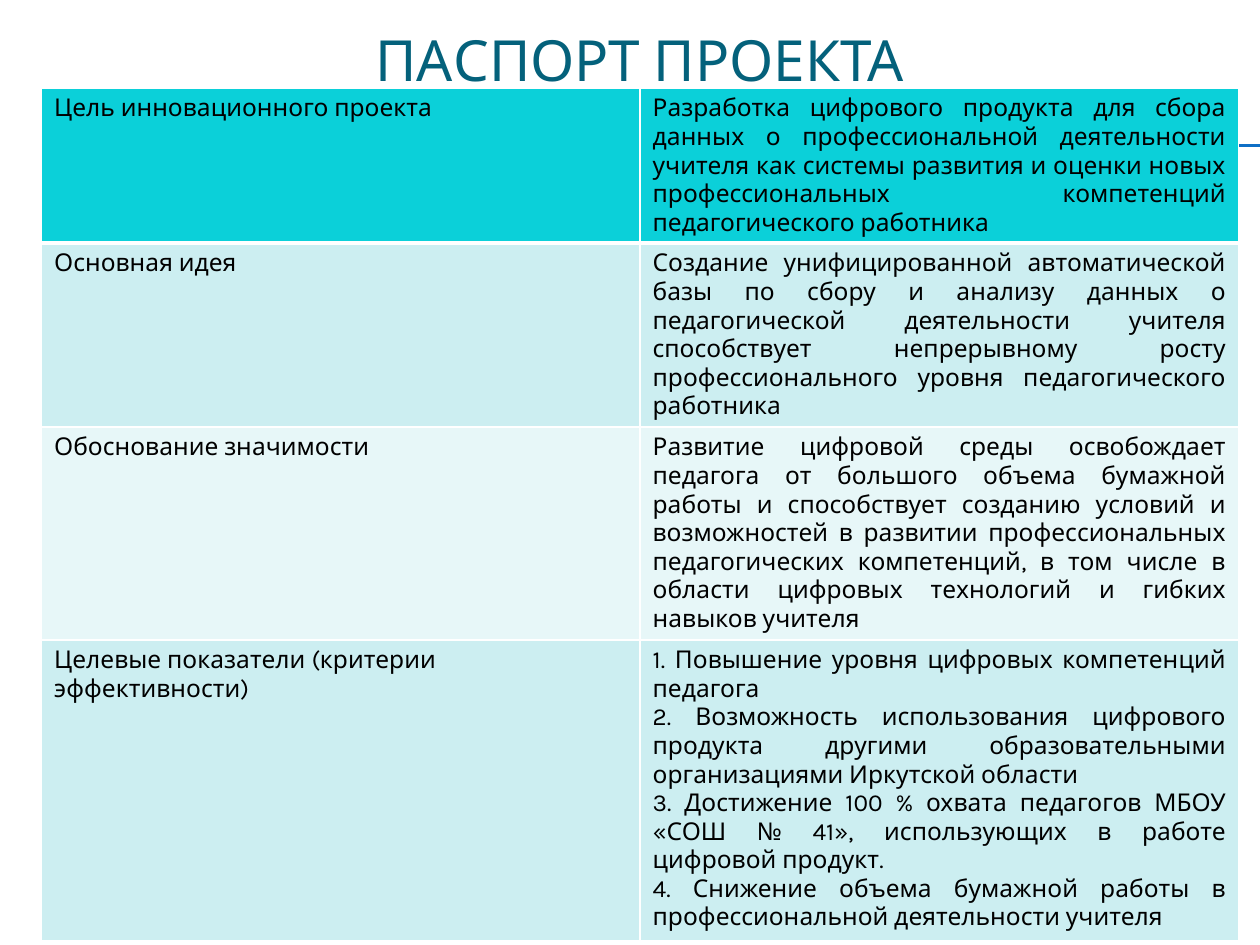
from lxml.etree import SubElement
from pptx import Presentation
from pptx.dml.color import RGBColor
from pptx.enum.shapes import MSO_CONNECTOR
from pptx.enum.text import MSO_ANCHOR, PP_ALIGN
from pptx.oxml.ns import qn
from pptx.util import Inches, Pt

FONT = "Karla"
COLORS = {"title": "04617B", "text": "000000", "rule": "0F6FC6", "border": "FFFFFF",
          "header": "0BD0D9", "band_dark": "CCEEF1", "band_light": "E7F7F8"}
LEFT, WIDTH = 0.33, 9.5
ROW_HEIGHTS = [1.23, 1.46, 1.69, 2.36]
ROWS = [
    ("Цель инновационного проекта",
     ["Разработка цифрового продукта для сбора данных о профессиональной деятельности "
      "учителя как системы развития и оценки новых профессиональных компетенций "
      "педагогического работника"]),
    ("Основная идея",
     ["Создание унифицированной автоматической базы по сбору и анализу данных о "
      "педагогической деятельности учителя способствует непрерывному росту "
      "профессионального уровня педагогического работника"]),
    ("Обоснование значимости",
     ["Развитие цифровой среды освобождает педагога от большого объема бумажной работы "
      "и способствует созданию условий и возможностей в развитии профессиональных "
      "педагогических компетенций, в том числе в области цифровых технологий и гибких "
      "навыков учителя"]),
    ("Целевые показатели (критерии эффективности)",
     ["1. Повышение уровня цифровых компетенций педагога",
      "2. Возможность использования цифрового продукта другими образовательными "
      "организациями Иркутской области",
      "3. Достижение 100 % охвата педагогов МБОУ «СОШ № 41», использующих в работе "
      "цифровой продукт.",
      "4. Снижение объема бумажной работы в профессиональной деятельности учителя"]),
]


def rgb(name):
    return RGBColor.from_string(COLORS[name])


def write(tf, paragraphs, size, color, align):
    for i, text in enumerate(paragraphs):
        p = tf.paragraphs[0] if i == 0 else tf.add_paragraph()
        p.alignment = align
        r = p.add_run()
        r.text = text
        for key, value in {"name": FONT, "size": Pt(size)}.items():
            setattr(r.font, key, value)
        r.font.color.rgb = rgb(color)


def add_rule(slide, y):
    line = slide.shapes.add_connector(MSO_CONNECTOR.STRAIGHT, Inches(0.56), Inches(y),
                                      Inches(10), Inches(y))
    line.line.color.rgb = rgb("rule")
    line.line.width = Pt(0.75)
    SubElement(line._element.spPr, qn("a:effectLst"))


def add_title(slide, text):
    tf = slide.shapes.add_textbox(Inches(LEFT), Inches(0.23),
                                  Inches(WIDTH), Inches(0.47)).text_frame
    frame = {"word_wrap": True, "vertical_anchor": MSO_ANCHOR.MIDDLE}
    for key, value in frame.items():
        setattr(tf, key, value)
    write(tf, [text], 32.4, "title", PP_ALIGN.CENTER)


def set_borders(cell, widths):
    """Draw cell borders; they must precede the fill in tcPr."""
    tc_pr = cell._tc.get_or_add_tcPr()
    for i, (side, width) in enumerate(widths.items()):
        ln = SubElement(tc_pr, qn(f"a:ln{side}"), w=str(Pt(width)))
        fill = SubElement(ln, qn("a:solidFill"))
        SubElement(fill, qn("a:srgbClr"), val=COLORS["border"])
        tc_pr.insert(i, ln)


def add_passport_table(slide):
    table = slide.shapes.add_table(len(ROWS), 2, Inches(LEFT), Inches(0.7),
                                   Inches(WIDTH), Inches(sum(ROW_HEIGHTS))).table
    for col in table.columns:
        col.width = Inches(WIDTH / 2)
    for i, (label, details) in enumerate(ROWS):
        table.rows[i].height = Inches(ROW_HEIGHTS[i])
        band = "header" if i == 0 else "band_dark" if i % 2 else "band_light"
        widths = {"L": 1, "R": 1, "T": 3 if i == 1 else 1, "B": 3 if i == 0 else 1}
        contents = [([label], PP_ALIGN.LEFT), (details, PP_ALIGN.JUSTIFY)]
        for j, (paragraphs, align) in enumerate(contents):
            cell = table.cell(i, j)
            cell.margin_bottom = Inches(0)
            cell.fill.solid()
            cell.fill.fore_color.rgb = rgb(band)
            set_borders(cell, widths)
            write(cell.text_frame, paragraphs, 14, "text", align)


def main():
    prs = Presentation()
    prs.slide_width, prs.slide_height = Inches(10), Inches(7.5)
    slide = prs.slides.add_slide(prs.slide_layouts[6])
    for y in (1.15, 1.16):
        add_rule(slide, y)
    add_title(slide, "ПАСПОРТ ПРОЕКТА")
    add_passport_table(slide)
    prs.save("out.pptx")


if __name__ == "__main__":
    main()
